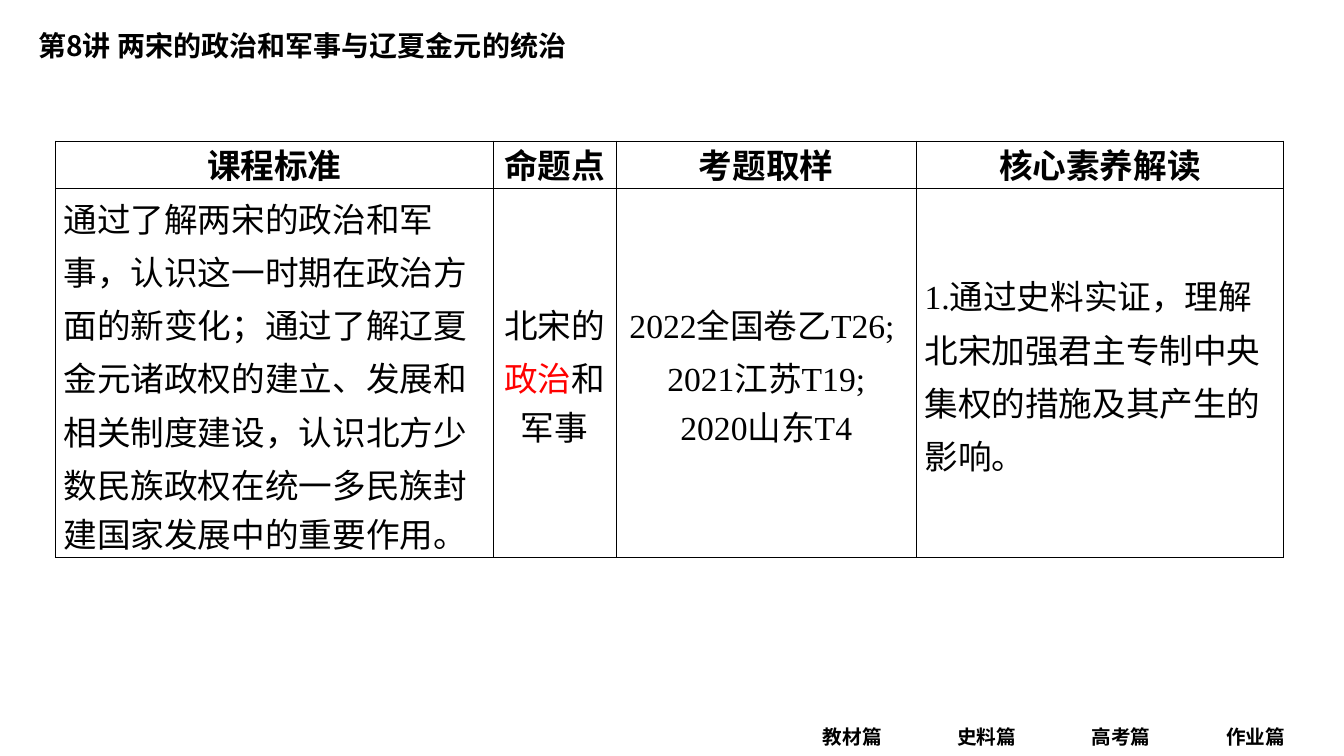
from lxml import etree
from pptx import Presentation, util as u
from pptx.dml.color import RGBColor
from pptx.enum import text as t
from pptx.oxml.ns import qn

WIDTH, HEIGHT = 13.33, 7.5
LATIN, HAN = "Times New Roman", "Noto Sans CJK SC"
BLACK, RED = "000000", "FF0000"
CENTER, LEFT = t.PP_ALIGN.CENTER, t.PP_ALIGN.LEFT

TITLE = "第8讲 两宋的政治和军事与辽夏金元的统治"
SECTIONS = ["教材篇", "史料篇", "高考篇", "作业篇"]
COLUMNS = [4.34, 1.22, 2.98, 3.64]
ROWS = [0.47, 3.65]
HEADINGS = ["课程标准", "命题点", "考题取样", "核心素养解读"]

# Each cell is (alignment, lines); each line is a list of (words, colour)
STANDARD = """通过了解两宋的政治和军
事，认识这一时期在政治方
面的新变化；通过了解辽夏
金元诸政权的建立、发展和
相关制度建设，认识北方少
数民族政权在统一多民族封
建国家发展中的重要作用。""".split("\n")
EXAMS = ["2022全国卷乙T26; ", "2021江苏T19;", "2020山东T4"]
LITERACY = "1.通过史料实证，理解北宋加强君主专制中央集权的措施及其产生的影响。"
CONTENT = [
    (LEFT, [[(line, BLACK)] for line in STANDARD]),
    (CENTER, [[("北宋的", BLACK)], [("政治", RED), ("和", BLACK)], [("军事", BLACK)]]),
    (CENTER, [[(line, BLACK)] for line in EXAMS]),
    (LEFT, [[(LITERACY, BLACK)]]),
]


def colour(value):
    return RGBColor.from_string(value)


def add_run(paragraph, words, size, bold=False, tone=BLACK, latin=LATIN):
    run = paragraph.add_run()
    run.text = words
    font = run.font
    font.size, font.bold, font.name = u.Pt(size), bold, latin
    font.color.rgb = colour(tone)
    etree.SubElement(font._element, qn("a:ea"), typeface=HAN)


def add_label(slide, box, words, size, align, latin=LATIN):
    frame = slide.shapes.add_textbox(*map(u.Inches, box)).text_frame
    frame.word_wrap = True
    frame.vertical_anchor = t.MSO_ANCHOR.MIDDLE
    frame.margin_left = frame.margin_right = 0
    frame.margin_top = frame.margin_bottom = 0
    frame.paragraphs[0].alignment = align
    add_run(frame.paragraphs[0], words, size, True, latin=latin)


def add_sections(slide, box):
    left, top, width, height = box
    pitch = width / len(SECTIONS)
    for i, section in enumerate(SECTIONS):
        add_label(slide, (left + i * pitch, top, 1.13, height), section, 14, CENTER)


def style_cell(cell):
    cell.margin_left = cell.margin_right = u.Inches(0.08)
    cell.margin_top = cell.margin_bottom = 0
    cell.vertical_anchor = t.MSO_ANCHOR.MIDDLE
    properties = cell._tc.get_or_add_tcPr()
    for side in ("lnL", "lnR", "lnT", "lnB"):
        border = etree.SubElement(properties, qn(f"a:{side}"), w=str(u.Pt(0.75)))
        fill = etree.SubElement(border, qn("a:solidFill"))
        etree.SubElement(fill, qn("a:srgbClr"), val=BLACK)
    cell.fill.background()


def fill_cell(cell, align, lines, spacings, bold=False):
    style_cell(cell)
    frame = cell.text_frame
    for i, (line, spacing) in enumerate(zip(lines, spacings)):
        paragraph = frame.add_paragraph() if i else frame.paragraphs[0]
        paragraph.alignment = align
        paragraph.line_spacing = u.Pt(spacing)
        for words, tone in line:
            add_run(paragraph, words, 24, bold, tone)


def add_syllabus(slide, left, top):
    box = map(u.Inches, (left, top, sum(COLUMNS), sum(ROWS)))
    table = slide.shapes.add_table(len(ROWS), len(COLUMNS), *box).table
    table.first_row = table.horz_banding = False
    for row, height in zip(table.rows, ROWS):
        row.height = u.Inches(height)
    for i, (width, heading, (align, lines)) in enumerate(zip(COLUMNS, HEADINGS, CONTENT)):
        table.columns[i].width = u.Inches(width)
        fill_cell(table.cell(0, i), CENTER, [[(heading, BLACK)]], [34], True)
        # The last of several lines sits tighter
        spacings = [38] * (len(lines) - 1) + [35 if len(lines) > 1 else 38]
        fill_cell(table.cell(1, i), align, lines, spacings)


def main():
    deck = Presentation()
    deck.slide_width, deck.slide_height = u.Inches(WIDTH), u.Inches(HEIGHT)
    slide = deck.slides.add_slide(deck.slide_layouts[6])
    # Lecture title
    add_label(slide, (0.38, 0.23, 11.09, 0.44), TITLE, 20, LEFT, HAN)
    # Section names along the foot
    add_sections(slide, (7.89, 7.15, WIDTH * 0.4, 0.32))
    # Syllabus table
    add_syllabus(slide, 0.55, 1.4)
    deck.save("out.pptx")


if __name__ == "__main__":
    main()
